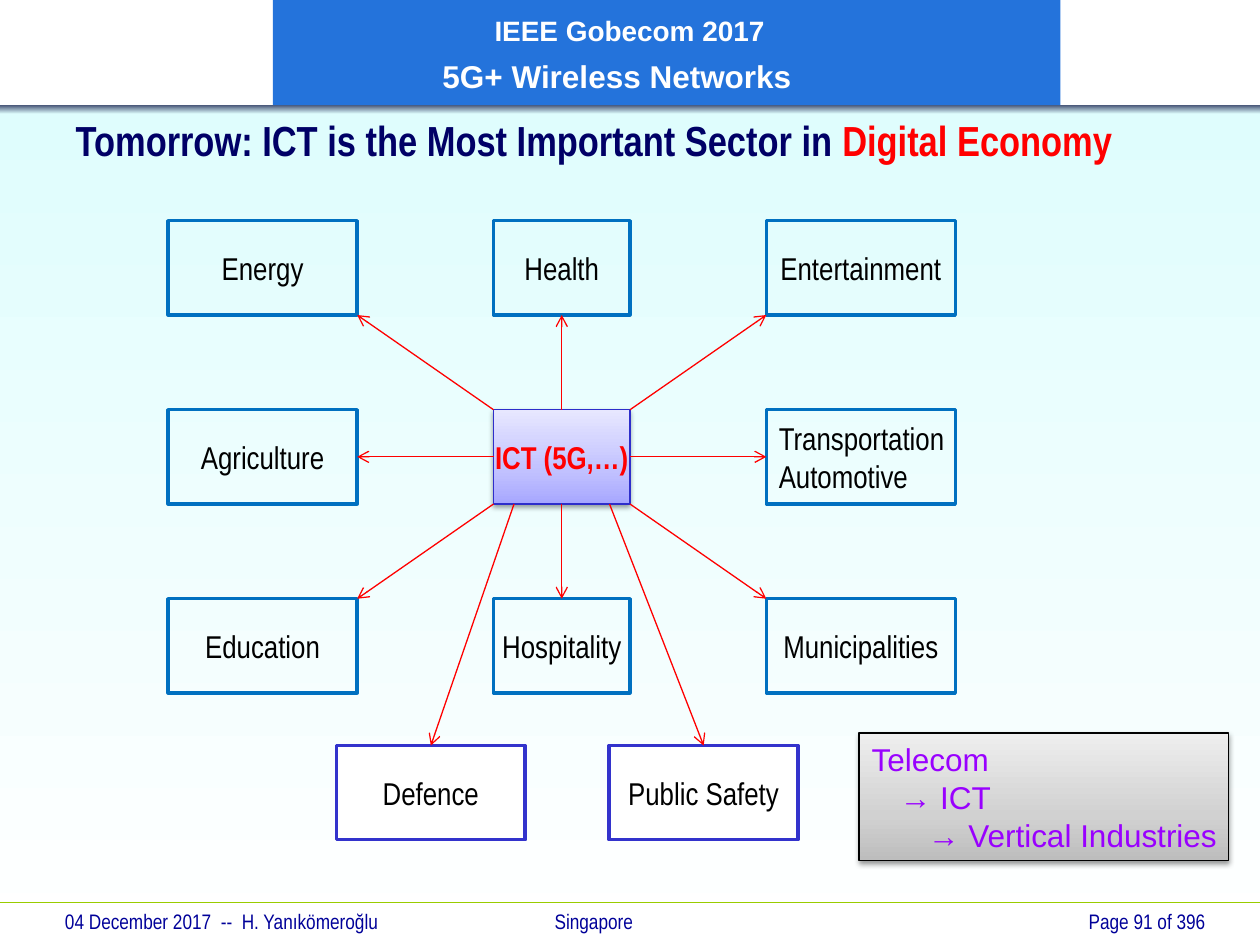
import copy
from dataclasses import dataclass

import pptx
import pptx.dml.color
import pptx.enum.shapes
import pptx.enum.text
import pptx.oxml.ns
import pptx.oxml.xmlchemy
import pptx.util
from lxml import etree

Cm = pptx.util.Cm
Pt = pptx.util.Pt
qn = pptx.oxml.ns.qn
ALIGN = pptx.enum.text.PP_ALIGN
ANCHOR = pptx.enum.text.MSO_ANCHOR


@dataclass(frozen=True)
class Theme:
    sans: str = "Arial"
    narrow: str = "Arial Narrow"
    title_size: int = 24
    body_size: int = 18
    header_size: int = 16
    footer_size: int = 12
    white: str = "FFFFFF"
    black: str = "000000"
    navy: str = "000066"
    footer: str = "000099"
    footer_rule: str = "99CC00"
    header: str = "2473DB"
    red: str = "FF0000"
    sector: str = "0070C0"
    safety: str = "3333CC"
    hub_line: str = "2E2ECB"
    callout: str = "9900FF"
    backdrop: tuple = ((0, "DFFDFD"), (1, "FFFFFF"))
    header_edge: tuple = ((0, "475577"), (1, "DFFDFD"))
    hub_fill: tuple = ((0, "A7A7FF"), (0.35, "C1C1FF"), (1, "E7E7FF"))
    callout_fill: tuple = ((0, "BDBDBD"), (0.35, "D1D1D1"), (1, "EEEEEE"))


T = Theme()


def rgb(value):
    return pptx.dml.color.RGBColor.from_string(value)


def set_font(p, size, color, name=T.narrow, bold=False):
    for r in p.runs:
        r.font.name, r.font.size, r.font.bold = name, Pt(size), bold
        r.font.color.rgb = rgb(color)


def set_gradient(sp, stops, angle):
    sp.fill.gradient()
    sp.fill.gradient_angle = angle
    gs_list = sp._element.spPr.find(".//" + qn("a:gsLst"))
    for _ in stops[2:]:
        gs_list.append(copy.deepcopy(gs_list[0]))
    for stop, (position, color) in zip(sp.fill.gradient_stops, stops):
        stop.position = position
        stop.color.rgb = rgb(color)


def add_box(s, box, fill=None, line=None, width=2, angle=270):
    sp = s.shapes.add_shape(pptx.enum.shapes.MSO_SHAPE.RECTANGLE, *map(Cm, box))
    sp.shadow.inherit = False
    if isinstance(fill, tuple):
        set_gradient(sp, fill, angle)
    elif fill:
        sp.fill.solid()
        sp.fill.fore_color.rgb = rgb(fill)
    else:
        sp.fill.background()
    if line:
        sp.line.color.rgb = rgb(line)
        sp.line.width = Pt(width)
    else:
        sp.line.fill.background()
    return sp


def add_shadow(sp):
    effects = sp._element.spPr.find(qn("a:effectLst"))
    shadow = etree.SubElement(effects, qn("a:outerShdw"), blurRad=str(Pt(3.1)),
                              dist=str(Pt(1.6)), dir="5400000", rotWithShape="0")
    color = etree.SubElement(shadow, qn("a:srgbClr"), val=T.black)
    etree.SubElement(color, qn("a:alpha"), val="38000")


def add_line(s, start, end, color, arrow=False):
    line = s.shapes.add_connector(pptx.enum.shapes.MSO_CONNECTOR.STRAIGHT,
                                  *map(Cm, (*start, *end)))
    line.line.color.rgb = rgb(color)
    line.line.width = Pt(0.75)
    if arrow:
        ln = line._element.spPr.find(qn("a:ln"))
        etree.SubElement(ln, qn("a:tailEnd"), type="arrow")
    etree.SubElement(line._element.spPr, qn("a:effectLst"))


def add_label(sp, text, align=ALIGN.CENTER, color=T.black, bold=False):
    tf = sp.text_frame
    tf.word_wrap = False
    tf.vertical_anchor = ANCHOR.MIDDLE
    tf.text = text
    for p in tf.paragraphs:
        p.alignment = align
        set_font(p, T.body_size, color, bold=bold)


def indent(p, length):
    p._p.get_or_add_pPr().set("marL", str(Cm(length)))


def add_footer(s, box):
    x, y, w, h = box
    add_line(s, (x, y), (x + w, y), T.footer_rule)
    left = s.shapes.add_textbox(Cm(x + 1.06), Cm(y), Cm(15.88), Cm(h))
    right = s.shapes.add_textbox(Cm(x + w - 6.35), Cm(y), Cm(5.5), Cm(h))
    left.text_frame.text = "04 December 2017  --  H. Yanıkömeroğlu\tSingapore"
    right.text_frame.text = "Page 91 of 396"
    p = left.text_frame.paragraphs[0]
    tabs = etree.SubElement(p._p.get_or_add_pPr(), qn("a:tabLst"))
    etree.SubElement(tabs, qn("a:tab"), pos=str(Cm(9.87)), algn="l")
    right.text_frame.paragraphs[0].alignment = ALIGN.RIGHT
    for sp in (left, right):
        sp.text_frame.word_wrap = True
        set_font(sp.text_frame.paragraphs[0], T.footer_size, T.footer)


def add_header(s, box):
    x, y, w, h = box
    add_box(s, (x, y + h, w, 0.18), T.header_edge)
    sp = add_box(s, (x + 5.5, y, 15.88, h), T.header)
    tf = sp.text_frame
    tf.vertical_anchor = ANCHOR.MIDDLE
    tf.margin_left = tf.margin_top = tf.margin_bottom = 0
    tf.text = "IEEE Gobecom 2017\n5G+ Wireless Networks"
    for p, size, left in zip(tf.paragraphs, (T.header_size, T.body_size), (4.47, 3.42)):
        p.alignment = ALIGN.LEFT
        p.line_spacing = 1.1
        indent(p, left)
        set_font(p, size, T.white, T.sans, True)
    tf.paragraphs[1].space_before = Pt(3.6)


def add_title(s, box):
    sp = s.shapes.title
    s.shapes._spTree.append(sp._element)
    sp.left, sp.top, sp.width, sp.height = map(Cm, box)
    tf = sp.text_frame
    tf.auto_size = pptx.enum.text.MSO_AUTO_SIZE.NONE
    tf.vertical_anchor = ANCHOR.MIDDLE
    p = tf.paragraphs[0]
    p.alignment = ALIGN.LEFT
    for text in ("Tomorrow: ICT is the Most Important Sector in ", "Digital Economy"):
        p.add_run().text = text
    set_font(p, T.title_size, T.navy, bold=True)
    p.runs[1].font.color.rgb = rgb(T.red)


def add_diagram(s, box):
    x, y, w, h = box
    side, middle, height, pitch = 3.81, 2.75, 1.9, 3.81
    columns = ((x, side), (x + (w - middle) / 2, middle), (x + w - side, side))
    sectors = (("Energy", "Health", "Entertainment"),
               ("Agriculture", None, "Transportation\nAutomotive"),
               ("Education", "Hospitality", "Municipalities"))
    hub_x, hub_y = columns[1][0], y + pitch

    hub = add_box(s, (hub_x, hub_y, middle, height), T.hub_fill, T.hub_line, 0.75, 90)
    add_shadow(hub)
    add_label(hub, "ICT (5G,…)", color=T.red, bold=True)

    for row, names in enumerate(sectors):
        top = y + row * pitch
        for col, (name, (left, width)) in enumerate(zip(names, columns)):
            if name is None:
                continue
            sp = add_box(s, (left, top, width, height), line=T.sector)
            add_label(sp, name, ALIGN.LEFT if "\n" in name else ALIGN.CENTER)
            start = (hub_x + middle * col / 2, hub_y + height * row / 2)
            end = (left + width * (2 - col) / 2, top + height * (2 - row) / 2)
            add_line(s, start, end, T.red, True)

    top = y + h - height
    for name, offset, share in (("Defence", 3.39, 0.15), ("Public Safety", 8.89, 0.85)):
        sp = add_box(s, (x + offset, top, side, height), T.white, T.safety)
        add_label(sp, name)
        add_line(s, (hub_x + middle * share, hub_y + height),
                 (x + offset + side / 2, top), T.red, True)


def add_callout(s, box):
    sp = add_box(s, box, T.callout_fill, T.black, 0.75, 90)
    add_shadow(sp)
    add_label(sp, "Telecom\n→ ICT\n→ Vertical Industries", ALIGN.LEFT)
    for level, p in enumerate(sp.text_frame.paragraphs):
        indent(p, 0.57 * level)
        set_font(p, T.body_size, T.callout, T.sans)


def main():
    prs = pptx.Presentation()
    prs.slide_width, prs.slide_height = Cm(25.4), Cm(19.05)
    s = prs.slides.add_slide(prs.slide_layouts[5])
    add_box(s, (0, 2.18, 25.4, 16.87), T.backdrop)
    add_footer(s, (0, 18.2, 25.4, 0.85))
    add_header(s, (0, 0, 25.4, 2.12))
    add_title(s, (1.27, 2.29, 23.07, 1.06))
    add_diagram(s, (3.39, 4.45, 15.87, 12.48))
    add_callout(s, (17.32, 14.78, 7.44, 2.57))
    prs.save("out.pptx")


if __name__ == "__main__":
    main()
